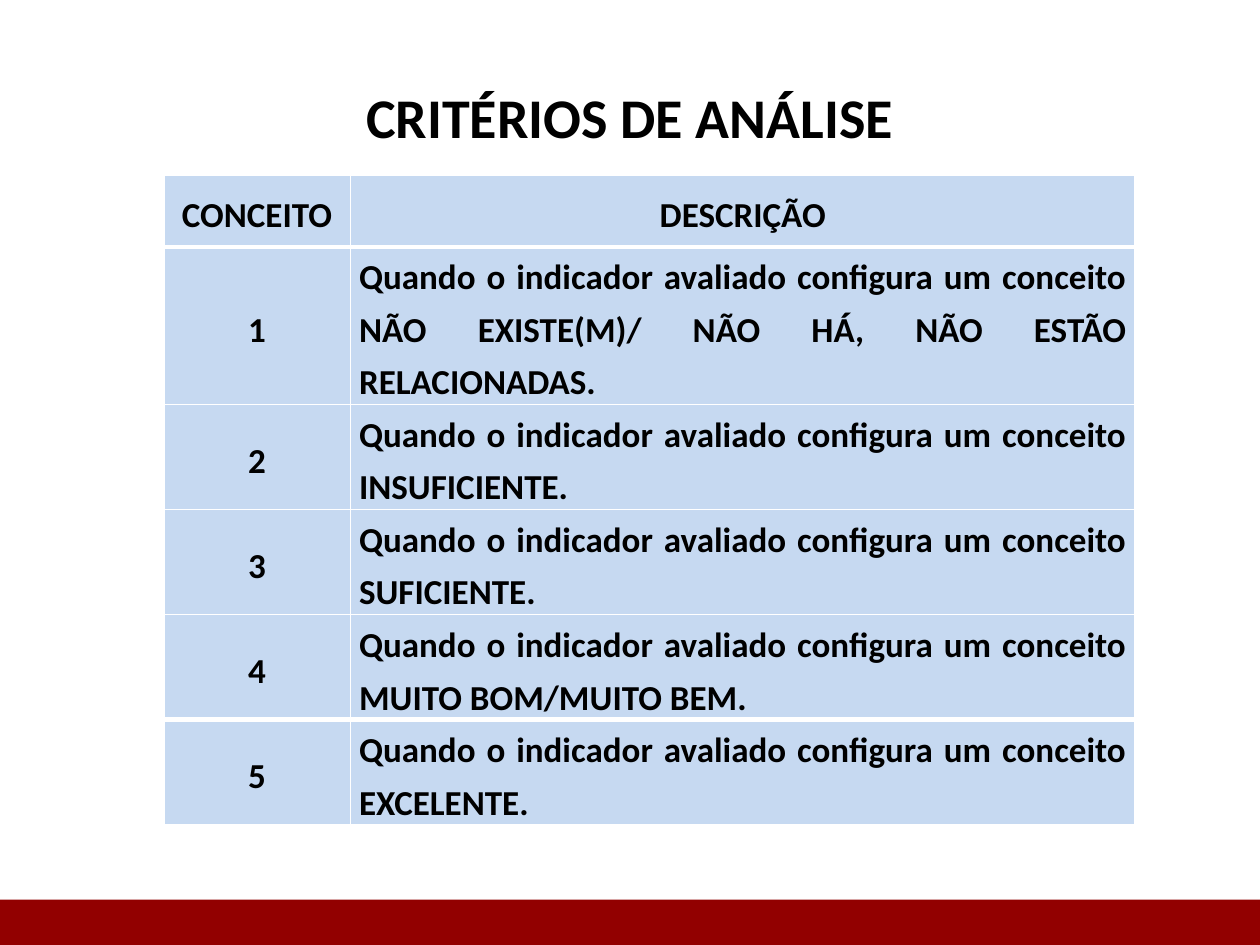
from dataclasses import dataclass

from lxml.etree import SubElement
from pptx import Presentation
from pptx.dml.color import RGBColor
from pptx.enum.shapes import MSO_SHAPE as Shape
from pptx.enum.text import MSO_ANCHOR as Anchor, PP_ALIGN as Align
from pptx.oxml.ns import qn
from pptx.slide import Slide
from pptx.table import _Cell as Cell
from pptx.text.text import TextFrame
from pptx.util import Inches, Pt


@dataclass(frozen=True)
class Theme:
    font: str = "Calibri"
    text: str = "000000"
    cell: str = "C6D9F1"
    border: str = "FFFFFF"
    footer: str = "920000"
    title_size: int = 32
    table_size: int = 20
    line_spacing: int = 30
    thin: int = 1
    thick: int = 3


@dataclass(frozen=True)
class Criterion:
    grade: str
    verdict: str
    height: float = 0.83

    @property
    def description(self) -> str:
        return f"Quando o indicador avaliado configura um conceito {self.verdict}."


THEME = Theme()
CRITERIA = [
    Criterion("1", "NÃO EXISTE(M)/ NÃO HÁ, NÃO ESTÃO RELACIONADAS", 1.25),
    Criterion("2", "INSUFICIENTE"),
    Criterion("3", "SUFICIENTE"),
    Criterion("4", "MUITO BOM/MUITO BEM"),
    Criterion("5", "EXCELENTE"),
]
HEADER = ("CONCEITO", "DESCRIÇÃO")
HEADER_HEIGHT = 0.57
COLUMN_WIDTHS = (1.48, 6.23)


def write(frame: TextFrame, text: str, size: int, align: Align) -> None:
    frame.text = text
    paragraph = frame.paragraphs[0]
    paragraph.alignment = align
    font = paragraph.runs[0].font
    font.name, font.size, font.bold = THEME.font, Pt(size), True
    font.color.rgb = RGBColor.from_string(THEME.text)


def add_title(slide: Slide, text: str) -> None:
    box = slide.shapes.add_textbox(Inches(0.5), Inches(0.3), Inches(9), Inches(1.25))
    box.text_frame.word_wrap = True
    box.text_frame.vertical_anchor = Anchor.MIDDLE
    write(box.text_frame, text, THEME.title_size, Align.CENTER)


def add_footer(slide: Slide) -> None:
    bar = slide.shapes.add_shape(
        Shape.RECTANGLE, Inches(0), Inches(7.14), Inches(10), Inches(0.36)
    )
    bar.shadow.inherit = False
    bar.fill.solid()
    bar.fill.fore_color.rgb = RGBColor.from_string(THEME.footer)
    bar.line.fill.background()


def set_borders(cell: Cell, top: int, bottom: int) -> None:
    properties = cell._tc.get_or_add_tcPr()
    widths = {"a:lnL": THEME.thin, "a:lnR": THEME.thin, "a:lnT": top, "a:lnB": bottom}
    for tag, width in widths.items():
        line = SubElement(properties, qn(tag), w=str(Pt(width)))
        fill = SubElement(line, qn("a:solidFill"))
        SubElement(fill, qn("a:srgbClr"), val=THEME.border)


def fill_cell(cell: Cell, text: str, align: Align, top: int, bottom: int) -> None:
    set_borders(cell, top, bottom)
    cell.fill.solid()
    cell.fill.fore_color.rgb = RGBColor.from_string(THEME.cell)
    cell.vertical_anchor = Anchor.MIDDLE
    cell.margin_left = cell.margin_right = Inches(0.07)
    cell.margin_top = cell.margin_bottom = Inches(0)
    write(cell.text_frame, text, THEME.table_size, align)
    cell.text_frame.paragraphs[0].line_spacing = Pt(THEME.line_spacing)


def add_criteria_table(slide: Slide) -> None:
    rows = [HEADER] + [(item.grade, item.description) for item in CRITERIA]
    heights = [HEADER_HEIGHT] + [item.height for item in CRITERIA]
    table = slide.shapes.add_table(
        len(rows), len(HEADER), Inches(1.3), Inches(1.39),
        Inches(sum(COLUMN_WIDTHS)), Inches(sum(heights)),
    ).table
    for column, width in zip(table.columns, COLUMN_WIDTHS):
        column.width = Inches(width)
    edges = [THEME.thin] * (len(rows) + 1)
    edges[1] = edges[-2] = THEME.thick
    for row_index, (texts, height) in enumerate(zip(rows, heights)):
        table.rows[row_index].height = Inches(height)
        for column_index, text in enumerate(texts):
            is_description = row_index > 0 and column_index == 1
            align = Align.JUSTIFY if is_description else Align.CENTER
            cell = table.cell(row_index, column_index)
            fill_cell(cell, text, align, edges[row_index], edges[row_index + 1])


def main() -> None:
    """Build the slide of analysis criteria and save it."""
    presentation = Presentation()
    presentation.slide_width, presentation.slide_height = Inches(10), Inches(7.5)
    slide = presentation.slides.add_slide(presentation.slide_layouts[6])
    add_footer(slide)
    add_title(slide, "CRITÉRIOS DE ANÁLISE")
    add_criteria_table(slide)
    presentation.save("out.pptx")


if __name__ == "__main__":
    main()
